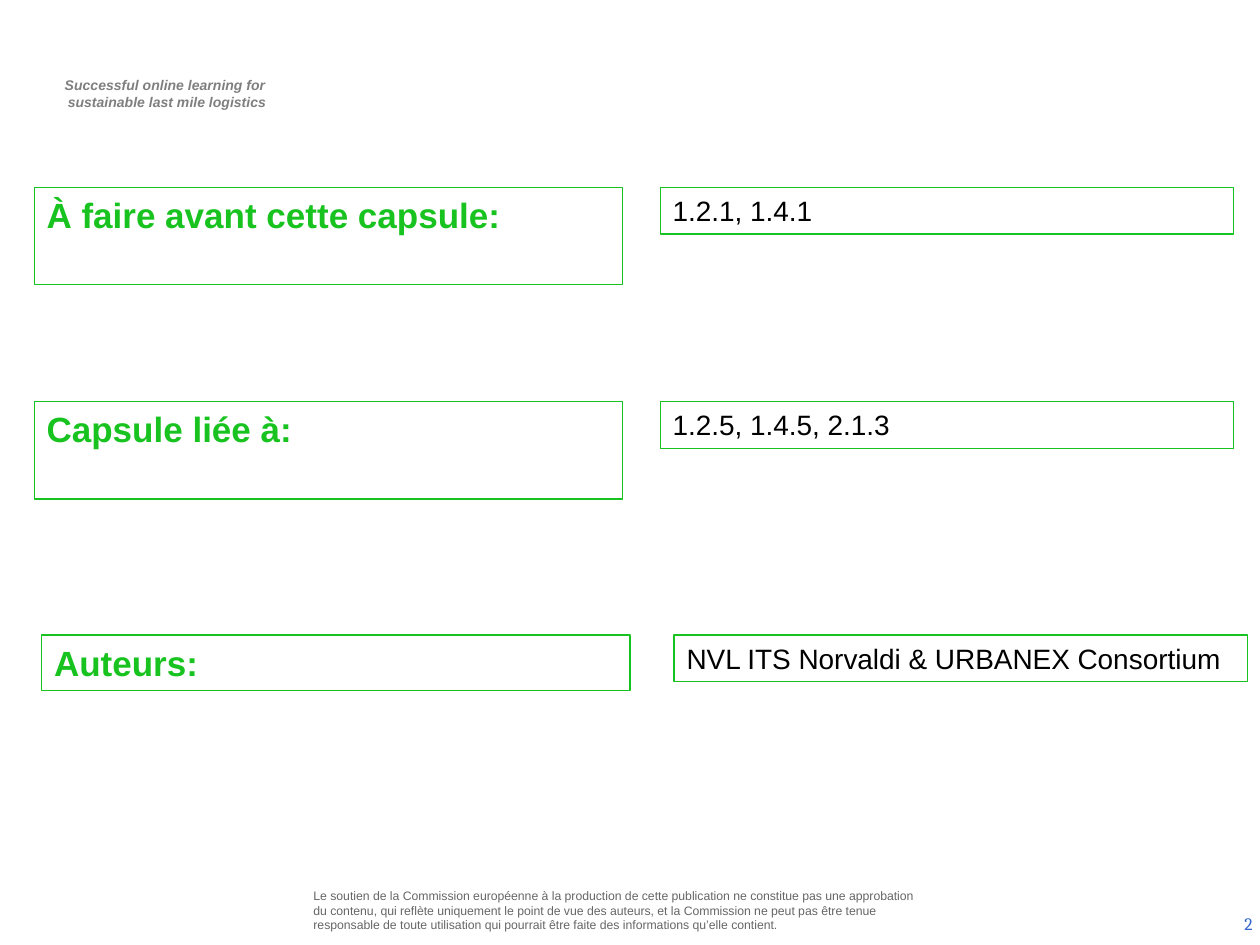
from dataclasses import dataclass

from pptx import Presentation
from pptx.dml.color import RGBColor
from pptx.enum.shapes import MSO_SHAPE
from pptx.enum.text import MSO_ANCHOR, PP_ALIGN
from pptx.slide import Slide
from pptx.util import Cm, Pt

COLORS = {
    "green": "18C320",
    "white": "FFFFFF",
    "black": "000000",
    "tagline": "7F7F7F",
    "disclaimer": "666666",
    "number": "3366CC",
}


@dataclass(frozen=True)
class TextStyle:
    size: float
    color: str
    font: str = "Arial"
    bold: bool = False
    italic: bool = False
    align: PP_ALIGN = PP_ALIGN.LEFT
    anchor: MSO_ANCHOR = MSO_ANCHOR.TOP
    indent: float = 0


@dataclass(frozen=True)
class Area:
    left: float
    top: float
    width: float
    height: float

    def lengths(self) -> tuple:
        return Cm(self.left), Cm(self.top), Cm(self.width), Cm(self.height)


@dataclass(frozen=True)
class InfoRow:
    top: float
    label: str
    value: str
    label_left: float = 0.69
    value_left: float = 13.31
    label_height: float = 1.96


LABEL = TextStyle(20, "green", bold=True)
VALUE = TextStyle(16, "black")
TAGLINE = TextStyle(8, "tagline", bold=True, italic=True, align=PP_ALIGN.CENTER, indent=0.1)
DISCLAIMER = TextStyle(7, "disclaimer")
NUMBER = TextStyle(10, "number", "Cambria", align=PP_ALIGN.RIGHT, anchor=MSO_ANCHOR.MIDDLE)

LABEL_WIDTH = 11.86
VALUE_WIDTH = 11.56
VALUE_HEIGHT = 0.94

ROWS = [
    InfoRow(3.78, "À faire avant cette capsule: ", "1.2.1, 1.4.1"),
    InfoRow(8.1, "Capsule liée à:", "1.2.5, 1.4.5, 2.1.3"),
    InfoRow(12.8, "Auteurs:", "NVL ITS Norvaldi & URBANEX Consortium", 0.84, 13.59, 1.12),
]


def color(name: str) -> RGBColor:
    return RGBColor.from_string(COLORS[name])


def write(box, text: str, style: TextStyle) -> None:
    frame = box.text_frame
    frame.text = text
    frame.word_wrap = True
    frame.vertical_anchor = style.anchor
    for para in frame.paragraphs:
        para.alignment = style.align
        if style.indent:
            para._p.get_or_add_pPr().set("marL", str(Cm(style.indent)))
        for span in para.runs:
            span.font.name = style.font
            span.font.size = Pt(style.size)
            span.font.bold = style.bold
            span.font.italic = style.italic
            span.font.color.rgb = color(style.color)


def add_text(page: Slide, area: Area, text: str, style: TextStyle) -> None:
    write(page.shapes.add_textbox(*area.lengths()), text, style)


def add_frame(page: Slide, area: Area, text: str, style: TextStyle) -> None:
    box = page.shapes.add_shape(MSO_SHAPE.RECTANGLE, *area.lengths())
    box.shadow.inherit = False
    box.fill.solid()
    box.fill.fore_color.rgb = color("white")
    box.line.color.rgb = color("green")
    box.line.width = Pt(0.75)
    write(box, text, style)


def add_row(page: Slide, row: InfoRow) -> None:
    label_area = Area(row.label_left, row.top, LABEL_WIDTH, row.label_height)
    value_area = Area(row.value_left, row.top, VALUE_WIDTH, VALUE_HEIGHT)
    add_frame(page, label_area, row.label, LABEL)
    add_frame(page, value_area, row.value, VALUE)


def main() -> None:
    deck = Presentation()
    deck.slide_width, deck.slide_height = Cm(25.4), Cm(19.05)
    page = deck.slides.add_slide(deck.slide_layouts[6])

    add_text(
        page,
        Area(0.74, 1.42, 5.16, 0.94),
        "Successful online learning for \nsustainable last mile logistics",
        TAGLINE,
    )
    add_text(
        page,
        Area(6.07, 17.78, 12.78, 1.14),
        "Le soutien de la Commission européenne à la production de cette publication "
        "ne constitue pas une approbation du contenu, qui reflète uniquement le point "
        "de vue des auteurs, et la Commission ne peut pas être tenue responsable de "
        "toute utilisation qui pourrait être faite des informations qu’elle contient.",
        DISCLAIMER,
    )
    add_text(page, Area(19.58, 18.11, 5.92, 1.02), "2", NUMBER)
    for row in ROWS:
        add_row(page, row)

    deck.save("out.pptx")


if __name__ == "__main__":
    main()
